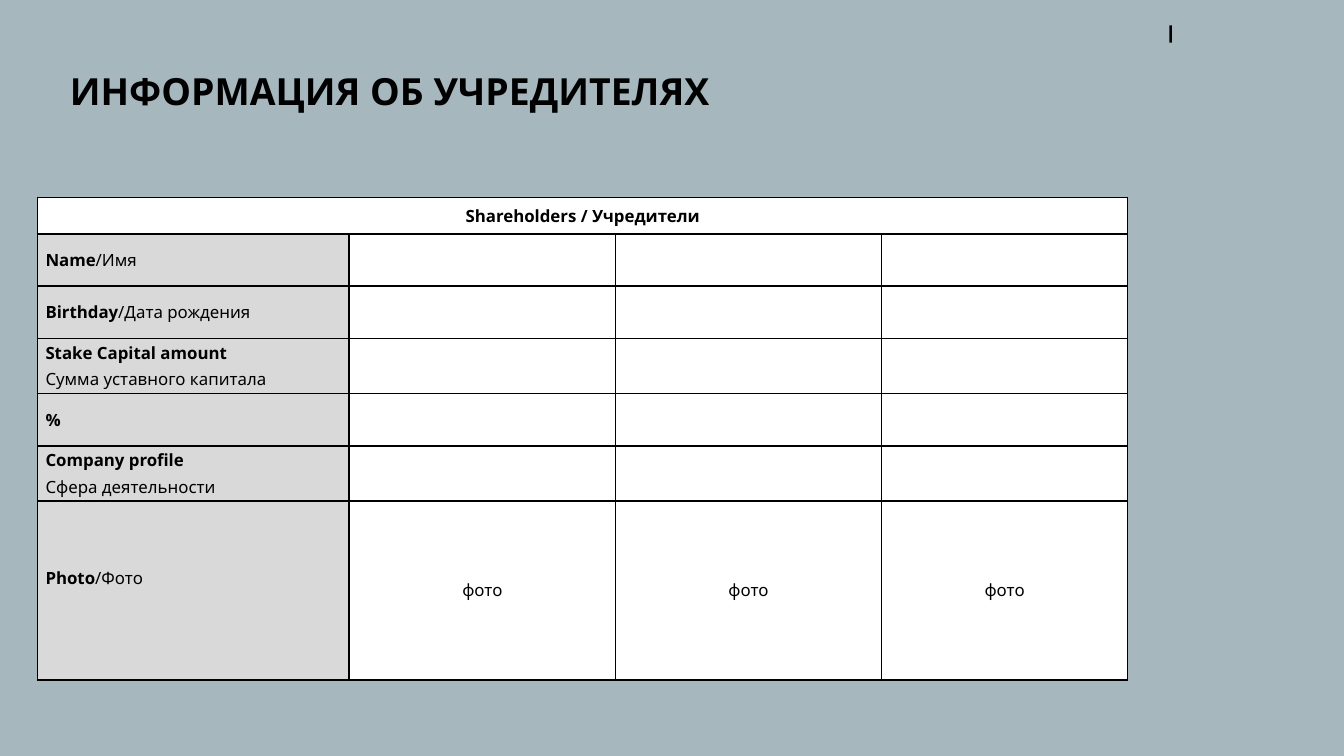
"""Build the slide about the shareholders."""
from dataclasses import dataclass

from lxml.etree import SubElement as Sub
from pptx import Presentation
from pptx.dml.color import RGBColor
from pptx.enum.shapes import MSO_SHAPE as Shape
from pptx.enum.text import MSO_ANCHOR as Anchor, PP_ALIGN as Align
from pptx.oxml.ns import qn
from pptx.util import Cm, Pt

BLACK = RGBColor(0x00, 0x00, 0x00)
WHITE = RGBColor(0xFF, 0xFF, 0xFF)
GREY = RGBColor(0xD9, 0xD9, 0xD9)
BLUE = RGBColor(0xA6, 0xB7, 0xBE)
FONT = "Noto Sans"
COLS = (5.89, 5.03, 5.03, 4.65)


@dataclass
class Row:
    bold: str
    plain: str = ""
    high: float = 0.99
    split: bool = False
    photo: str = ""
    low: float = 0.05


HEAD = Row("Shareholders / Учредители", high=0.69)
ROWS = (
    HEAD,
    Row("Name", "/Имя"),
    Row("Birthday", "/Дата рождения"),
    Row("Stake Capital amount", "Сумма уставного капитала", 1.04, True),
    Row("%"),
    Row("Company profile", "Сфера деятельности", 1.04, True),
    Row("Photo", "/Фото", 3.38, photo="фото", low=0.5),
)


def style(para, size: float = 9) -> None:
    font = para.font
    font.name, font.size = FONT, Pt(size)
    font.color.rgb = BLACK


def write(para, text: str, bold: bool) -> None:
    if text:
        run = para.add_run()
        run.text, run.font.bold = text, bold


def edge(cell) -> None:
    props = cell._tc.get_or_add_tcPr()
    for side in ("lnL", "lnR", "lnT", "lnB"):
        line = Sub(props, qn(f"a:{side}"), w=str(Pt(1)))
        fill = Sub(line, qn("a:solidFill"))
        Sub(fill, qn("a:srgbClr"), val=str(BLACK))


def dress(cell, color: RGBColor, low: float = 0.05) -> None:
    edge(cell)
    cell.fill.solid()
    cell.fill.fore_color.rgb = color
    cell.vertical_anchor = Anchor.MIDDLE
    cell.margin_left = cell.margin_right = Cm(0.15)
    cell.margin_top, cell.margin_bottom = Cm(0.05), Cm(low)
    style(cell.text_frame.paragraphs[0])


def label(cell, row: Row) -> None:
    frame = cell.text_frame
    para = frame.paragraphs[0]
    write(para, row.bold, True)
    if row.split:
        para = frame.add_paragraph()
        para.space_before = Pt(1.8)
        style(para)
    write(para, row.plain, False)


def draw_table(slide) -> None:
    wide, high = sum(COLS), sum(row.high for row in ROWS)
    grid = slide.shapes.add_table(
        len(ROWS), len(COLS), Cm(0.71), Cm(3.73), Cm(wide), Cm(high)).table
    for col, width in zip(grid.columns, COLS):
        col.width = Cm(width)
    for r, row in enumerate(ROWS):
        grid.rows[r].height = Cm(row.high)
        for c in range(len(COLS)):
            cell = grid.cell(r, c)
            if c == 0:
                dress(cell, WHITE if row is HEAD else GREY, row.low)
                label(cell, row)
            else:
                dress(cell, WHITE)
                para = cell.text_frame.paragraphs[0]
                para.alignment = Align.CENTER
                write(para, row.photo, False)
    top = grid.cell(0, 0)
    top.merge(grid.cell(0, len(COLS) - 1))
    top.text_frame.paragraphs[0].alignment = Align.CENTER


def draw_title(slide) -> None:
    box = slide.shapes.add_textbox(Cm(1.07), Cm(1.17), Cm(17.22), Cm(1.37))
    box.text_frame.word_wrap = True
    para = box.text_frame.paragraphs[0]
    para.text = "ИНФОРМАЦИЯ ОБ УЧРЕДИТЕЛЯХ"
    style(para, 20)
    para.font.bold = True


def draw_mark(slide) -> None:
    mark = slide.shapes.add_shape(
        Shape.RECTANGLE, Cm(22.1), Cm(0.48), Cm(0.05), Cm(0.33))
    mark.shadow.inherit = False
    mark.fill.solid()
    mark.fill.fore_color.rgb = BLACK
    mark.line.fill.background()


def main() -> None:
    deck = Presentation()
    deck.slide_width, deck.slide_height = Cm(25.4), Cm(14.29)
    slide = deck.slides.add_slide(deck.slide_layouts[6])
    back = slide.background.fill
    back.solid()
    back.fore_color.rgb = BLUE
    draw_mark(slide)
    draw_table(slide)
    draw_title(slide)
    deck.save("out.pptx")


if __name__ == "__main__":
    main()
